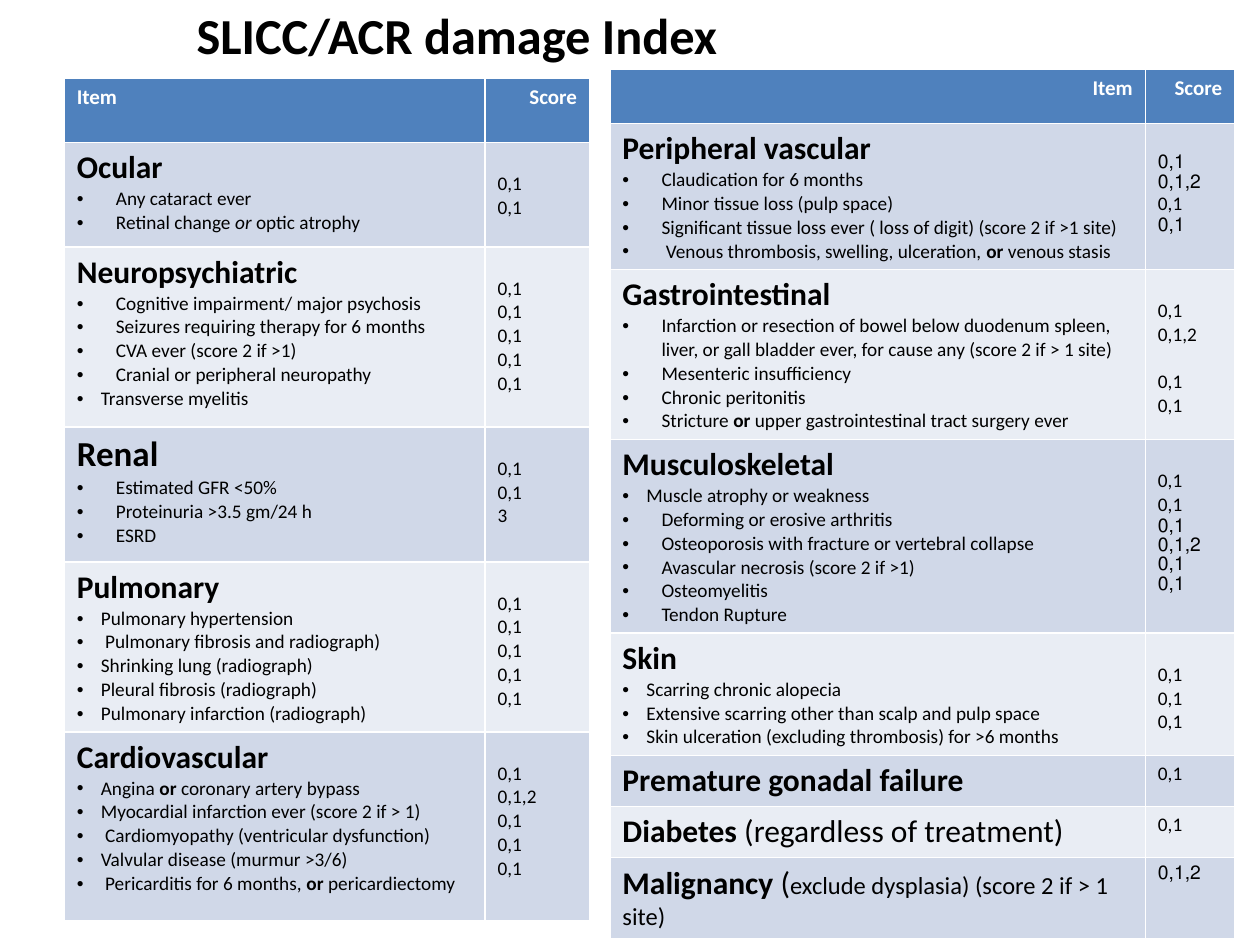
from dataclasses import dataclass

from lxml import etree
from pptx import Presentation
from pptx.dml.color import RGBColor
from pptx.enum.text import MSO_ANCHOR, MSO_AUTO_SIZE, PP_ALIGN
from pptx.oxml.ns import qn
from pptx.util import Inches, Pt

LEFT, RIGHT = PP_ALIGN.LEFT, PP_ALIGN.RIGHT
MIDDLE, NO_FIT = MSO_ANCHOR.MIDDLE, MSO_AUTO_SIZE.NONE
DEEP, SHALLOW = 0.31, 0.19


@dataclass(frozen=True)
class Theme:
    """Colours, type sizes and spacing of the slide."""
    font: str = "Calibri"
    ink: str = "000000"
    header_ink: str = "FFFFFF"
    header_fill: str = "4F81BD"
    bands: tuple = ("D0D8E8", "E9EDF4")
    title: float = 28.8
    header: float = 12
    heading: float = 18
    note: float = 14
    item: float = 11
    line: float = 13.4
    cell_margin: float = 3.6


THEME = Theme()


@dataclass(frozen=True)
class Organ:
    """One row: a damage domain with its items and scores."""
    height: float
    heading: str
    scores: tuple
    groups: tuple = ()
    notes: tuple = ()
    size: float = THEME.heading
    mirrored: tuple = ()
    gap_before: int = -1


LEFT_ORGANS = (
    Organ(0.83, "Ocular", ("0,1",) * 2, (
        (DEEP, ("Any cataract ever", "Retinal change _or _optic atrophy")),)),
    Organ(1.43, "Neuropsychiatric", ("0,1",) * 5, (
        (DEEP, ("Cognitive impairment/ major psychosis",
                "Seizures requiring therapy for 6 months",
                "CVA ever (score 2 if >1)",
                "Cranial or peripheral neuropathy")),
        (SHALLOW, ("Transverse myelitis",)))),
    Organ(1.07, "Renal", ("0,1", "0,1", "3"), (
        (DEEP, ("Estimated GFR <50%", "Proteinuria >3.5 gm/24 h", "ESRD")),), size=20),
    Organ(1.32, "Pulmonary", ("0,1",) * 5, (
        (SHALLOW, ("Pulmonary hypertension",
                   " Pulmonary fibrosis and radiograph)",
                   "Shrinking lung (radiograph)",
                   "Pleural fibrosis (radiograph)",
                   "Pulmonary infarction (radiograph)")),)),
    Organ(1.5, "Cardiovascular", ("0,1", "0,1,2", "0,1", "0,1", "0,1"), (
        (SHALLOW, ("Angina *or* coronary artery bypass",
                   "Myocardial infarction ever (score 2 if > 1)",
                   " Cardiomyopathy (ventricular dysfunction)",
                   "Valvular disease (murmur >3/6)",
                   " Pericarditis for 6 months, *or* pericardiectomy")),)),
)

RIGHT_ORGANS = (
    Organ(1.12, "Peripheral vascular", ("0,1", "0,1,2", "0,1", "0,1"), (
        (DEEP, ("Claudication for 6 months",
                "Minor tissue loss (pulp space)",
                "Significant tissue loss ever ( loss of digit) (score 2 if >1 site)",
                " Venous thrombosis, swelling, ulceration, *or* venous stasis")),),
        mirrored=(0, 1, 3)),
    Organ(1.32, "Gastrointestinal", ("0,1", "0,1,2", "0,1", "0,1"), (
        (DEEP, ("Infarction or resection of bowel below duodenum spleen, liver, "
                "or gall bladder ever, for cause any (score 2 if > 1 site)",
                "Mesenteric insufficiency",
                "Chronic peritonitis",
                "Stricture *or* upper gastrointestinal tract surgery ever")),),
        gap_before=2),
    Organ(1.5, "Musculoskeletal", ("0,1", "0,1", "0,1", "0,1,2", "0,1", "0,1"), (
        (SHALLOW, ("Muscle atrophy or weakness",)),
        (DEEP, ("Deforming or erosive arthritis",
                "Osteoporosis with fracture or vertebral collapse",
                "Avascular necrosis (score 2 if >1)",
                "Osteomyelitis",
                "Tendon Rupture"))),
        mirrored=(2, 3, 4, 5)),
    Organ(0.94, "Skin", ("0,1",) * 3, (
        (SHALLOW, ("Scarring chronic alopecia",
                   "Extensive scarring other than scalp and pulp space",
                   "Skin ulceration (excluding thrombosis) for >6 months")),)),
    Organ(0.4, "Premature gonadal failure", ("0,1",)),
    Organ(0.4, "Diabetes ", ("0,1",),
          notes=(("(regardless of treatment)", THEME.heading),)),
    Organ(0.63, "Malignancy", ("0,1,2",), mirrored=(0,),
          notes=((" (", THEME.heading),
                 ("exclude dysplasia) (score 2 if > 1 site)", THEME.note))),
)


def style(paragraph, size, color=THEME.ink, bold=False, align=LEFT):
    """Set the type shared by all runs of a paragraph."""
    paragraph.alignment = align
    font = paragraph.font
    font.name, font.size, font.bold = THEME.font, Pt(size), bold
    font.color.rgb = RGBColor.from_string(color)


def next_paragraph(frame, index):
    """Return the first paragraph for index 0, else a new one."""
    return frame.add_paragraph() if index else frame.paragraphs[0]


def fill_cell(cell, color):
    """Give a cell a plain fill."""
    cell.fill.solid()
    cell.fill.fore_color.rgb = RGBColor.from_string(color)


def add_item(frame, text, indent):
    """Add a bulleted item; *bold* and _italic_ mark emphasis."""
    paragraph = frame.add_paragraph()
    properties = paragraph._p.get_or_add_pPr()
    properties.set("marL", str(Inches(indent)))
    properties.set("indent", str(-Inches(indent)))
    etree.SubElement(properties, qn("a:buFont")).set("typeface", "Arial")
    etree.SubElement(properties, qn("a:buChar")).set("char", "•")
    style(paragraph, THEME.item)
    mark = "_" if "_" in text else "*"
    for position, part in enumerate(text.split(mark)):
        run = paragraph.add_run()
        run.text = part
        if position % 2:
            run.font.bold, run.font.italic = mark == "*", mark == "_"


def write_organ(cell, organ):
    """Write the heading, its notes and the items of a domain."""
    frame = cell.text_frame
    heading = frame.paragraphs[0]
    style(heading, organ.size, bold=True)
    heading.add_run().text = organ.heading
    for text, size in organ.notes:
        note = heading.add_run()
        note.text = text
        note.font.size, note.font.bold = Pt(size), False
    for indent, items in organ.groups:
        for item in items:
            add_item(frame, item, indent)


def write_scores(cell, organ):
    """Write the scores, starting level with the first item."""
    if organ.groups:
        cell.margin_top = Pt(THEME.cell_margin + THEME.line)
    for index, score in enumerate(organ.scores):
        paragraph = next_paragraph(cell.text_frame, index)
        paragraph.text = score
        if index in organ.mirrored:
            paragraph._p.get_or_add_pPr().set("rtl", "1")
        if index == organ.gap_before:
            paragraph.space_before = Pt(THEME.line)
        style(paragraph, THEME.item)


def add_index_table(slide, left, top, widths, header_height, item_align, organs):
    """Add one half of the index as a two-column table."""
    heights = [header_height] + [organ.height for organ in organs]
    table = slide.shapes.add_table(
        len(heights), len(widths), Inches(left), Inches(top),
        Inches(sum(widths)), Inches(sum(heights))).table
    for column, width in zip(table.columns, widths):
        column.width = Inches(width)
    for row, height in zip(table.rows, heights):
        row.height = Inches(height)
    for column, (label, align) in enumerate((("Item", item_align), ("Score", RIGHT))):
        cell = table.cell(0, column)
        cell.text = label
        fill_cell(cell, THEME.header_fill)
        style(cell.text_frame.paragraphs[0], THEME.header, THEME.header_ink, True, align)
    for row, organ in enumerate(organs, 1):
        for column, write in enumerate((write_organ, write_scores)):
            cell = table.cell(row, column)
            fill_cell(cell, THEME.bands[(row - 1) % 2])
            write(cell, organ)


def add_title(slide, text):
    """Place the slide title."""
    title = slide.shapes.title
    title.left, title.top = Inches(1.46), Inches(0)
    title.width, title.height = Inches(7.09), Inches(0.55)
    frame = title.text_frame
    frame.text = text
    frame.auto_size, frame.vertical_anchor = NO_FIT, MIDDLE
    style(frame.paragraphs[0], THEME.title, bold=True)


def main():
    """Build the slide and save it."""
    deck = Presentation()
    deck.slide_width, deck.slide_height = Inches(10), Inches(7.5)
    slide = deck.slides.add_slide(deck.slide_layouts[5])
    add_title(slide, "SLICC/ACR damage Index")
    add_index_table(slide, 0.51, 0.62, (3.34, 0.83), 0.51, LEFT, LEFT_ORGANS)
    add_index_table(slide, 4.84, 0.55, (4.25, 0.71), 0.43, RIGHT, RIGHT_ORGANS)
    deck.save("out.pptx")


if __name__ == "__main__":
    main()
